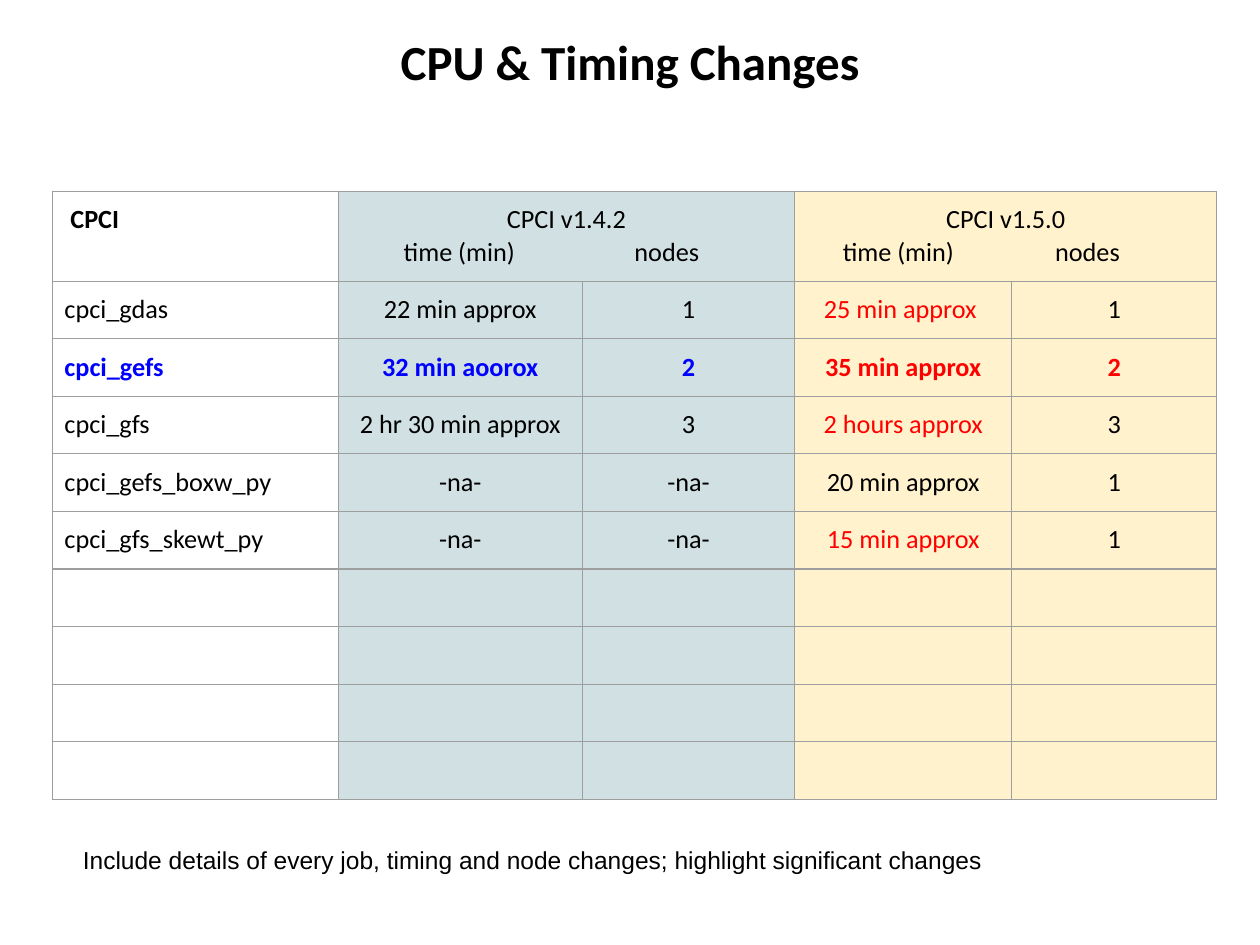
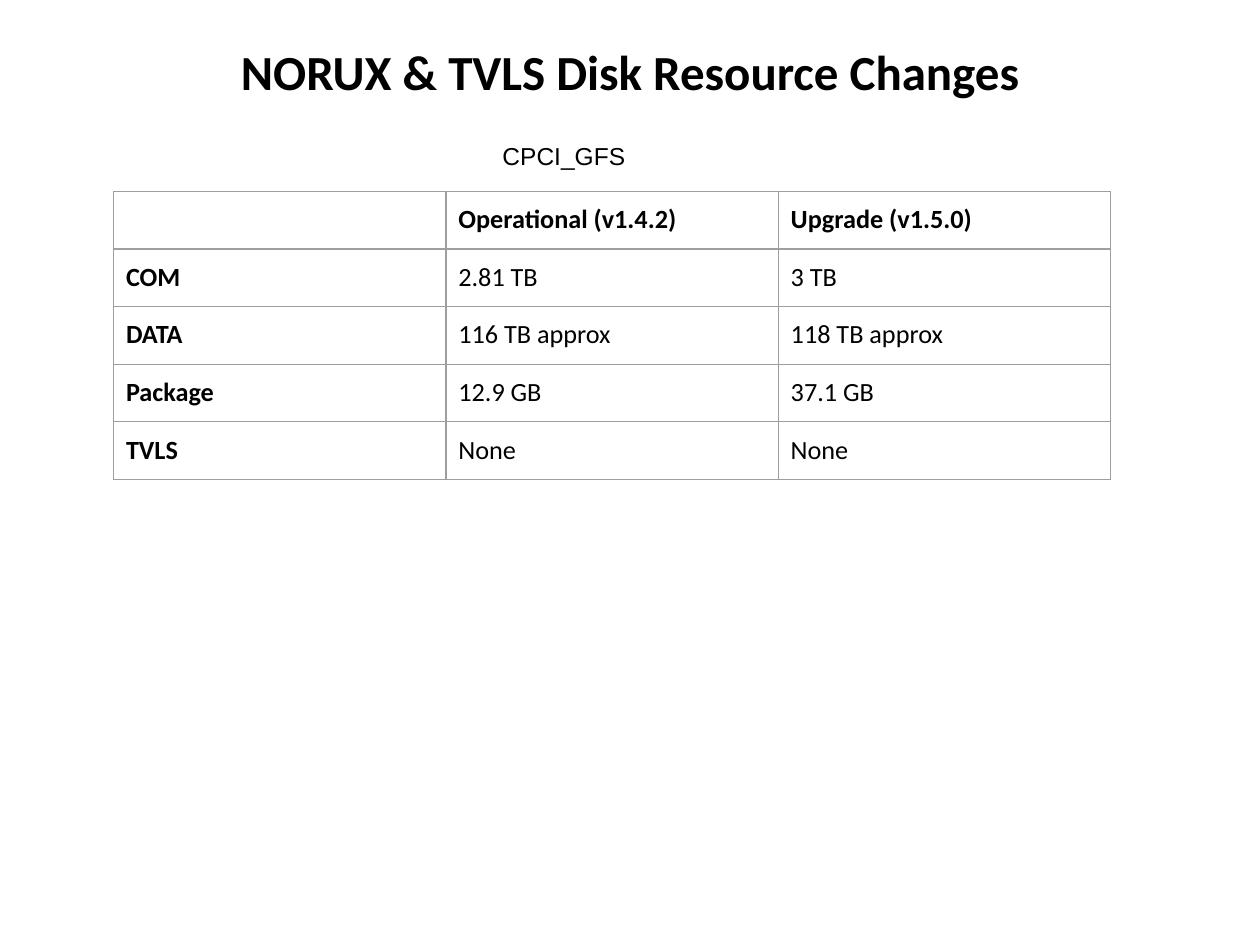
from lxml import etree
from pptx import Presentation
from pptx.dml.color import RGBColor
from pptx.enum import text as tx
from pptx.oxml import ns
from pptx.util import Cm, Pt

BLACK = RGBColor(0, 0, 0)
BLUE = RGBColor(0, 0, 255)
RED = RGBColor(255, 0, 0)
TEAL = RGBColor(0xD0, 0xE0, 0xE3)
CREAM = RGBColor(0xFF, 0xF2, 0xCC)
RULE = RGBColor(0x9E, 0x9E, 0x9E)

HEAD = "Calibri"
BODY = "Arial"
SIZE = 15
INSET = 0.25
TOP = 3.86
ROW = 1.16
LEFT, MID = tx.PP_ALIGN.LEFT, tx.PP_ALIGN.CENTER

# Each job: texts, then the ink of each column, then bold or not.
K, B, R = BLACK, BLUE, RED
JOBS = [
    (("cpci_gdas", "22 min approx", "1", "25 min approx ", "1"), (K, K, K, R, K), False),
    (("cpci_gefs", "32 min aoorox", "2", "35 min approx", "2"), (B, B, B, R, R), True),
    (("cpci_gfs", "2 hr 30 min approx", "3", "2 hours approx", "3"), (K, K, K, R, K), False),
    (("cpci_gefs_boxw_py", "-na-", "-na-", "20 min approx", "1"), (K,) * 5, False),
    (("cpci_gfs_skewt_py", "-na-", "-na-", "15 min approx", "1"), (K, K, K, R, K), False),
]
SPARE = 4
JOB_WIDTHS = (5.77, 4.92, 4.28, 4.38, 4.13)
JOB_FILLS = (None, TEAL, TEAL, CREAM, CREAM)
# First column, version, tab stops of the two sub-headings.
VERSIONS = [(1, "CPCI v1.4.2", (1.07, 5.72)), (3, "CPCI v1.5.0", (0.72, 5))]
SUBHEAD = "\ttime (min)\tnodes"
NOTE = "Include details of every job, timing and node changes; highlight significant changes"

CLUSTER, STORE = "NORUX", "TVLS"
DISKS = [
    ("", "Operational (v1.4.2)", "Upgrade (v1.5.0)"),
    ("COM", "2.81 TB", "3 TB"),
    ("DATA", "116 TB approx", "118 TB approx"),
    ("Package", "12.9 GB", "37.1 GB"),
    (STORE, "None", "None"),
]


def style(para, size, face, ink=BLACK, bold=False, align=LEFT):
    para.alignment = align
    for run in para.runs:
        font = run.font
        font.size, font.name, font.bold = Pt(size), face, bold
        font.color.rgb = ink
    if not para.runs:
        # keeps an empty row from growing to the default text size
        end = etree.SubElement(para._p, ns.qn("a:endParaRPr"))
        end.set("sz", str(size * 100))


def label(slide, words, x, y, w, h, size, face, pad=INSET, **look):
    frame = slide.shapes.add_textbox(Cm(x), Cm(y), Cm(w), Cm(h)).text_frame
    frame.word_wrap = True
    frame.margin_top = frame.margin_bottom = Cm(pad)
    frame.text = words
    style(frame.paragraphs[0], size, face, **look)


def title(slide, words, y):
    label(slide, words, 0.86, y, 23.68, 2.11, 28, HEAD, bold=True, align=MID)


def border(cell):
    props = cell._tc.get_or_add_tcPr()
    for side in ("lnL", "lnR", "lnT", "lnB"):
        line = etree.SubElement(props, ns.qn("a:" + side), w=str(Pt(0.75)))
        fill = etree.SubElement(line, ns.qn("a:solidFill"))
        etree.SubElement(fill, ns.qn("a:srgbClr"), val=str(RULE))


def grid(slide, x, widths, heights, fills):
    """Add a ruled table whose columns have the given fills."""
    table = slide.shapes.add_table(
        len(heights), len(widths), Cm(x), Cm(TOP),
        Cm(sum(widths)), Cm(sum(heights))).table
    table.first_row = table.horz_banding = False
    for col, w in zip(table.columns, widths):
        col.width = Cm(w)
    for row, h in zip(table.rows, heights):
        row.height = Cm(h)
        for cell, tint in zip(row.cells, fills):
            border(cell)
            if tint is None:
                cell.fill.background()
            else:
                cell.fill.solid()
                cell.fill.fore_color.rgb = tint
            cell.margin_left = cell.margin_right = Cm(INSET)
            cell.margin_top = cell.margin_bottom = Cm(INSET)
    return table


def write(cell, words, **look):
    cell.text_frame.text = words
    for para in cell.text_frame.paragraphs:
        style(para, SIZE, HEAD, **look)


def stops(para, places):
    tabs = etree.SubElement(para._p.get_or_add_pPr(), ns.qn("a:tabLst"))
    for place in places:
        etree.SubElement(tabs, ns.qn("a:tab"), pos=str(Cm(place)), algn="l")


def timing(slide):
    title(slide, "CPU & Timing Changes", 0.38)
    blank = (("",) * 5, (K,) * 5, False)
    rows = JOBS + [blank] * SPARE
    table = grid(slide, 1.05, JOB_WIDTHS, [1.81] + [ROW] * len(rows), JOB_FILLS)
    write(table.cell(0, 0), " CPCI", bold=True)
    for col, name, places in VERSIONS:
        cell = table.cell(0, col)
        cell.merge(table.cell(0, col + 1))
        write(cell, name + "\n" + SUBHEAD, align=MID)
        sub = cell.text_frame.paragraphs[1]
        sub.alignment = LEFT
        stops(sub, places)
    for r, (words, inks, bold) in enumerate(rows, 1):
        for c, (word, ink) in enumerate(zip(words, inks)):
            write(table.cell(r, c), word, ink=ink, bold=bold,
                  align=MID if c else LEFT)
    label(slide, NOTE, 1.42, 16.79, 21.34, 1.12, 14, BODY)


def disk(slide):
    title(slide, f"{CLUSTER} & {STORE} Disk Resource Changes", 0.58)
    table = grid(slide, 2.29, [6.7] * 3, [ROW] * len(DISKS), [None] * 3)
    for r, words in enumerate(DISKS):
        for c, word in enumerate(words):
            write(table.cell(r, c), word, bold=r == 0 or c == 0)
    label(slide, "CPCI_GFS", 9.88, 2.72, 3.73, 0.86, 14, BODY, pad=0.13)


def main():
    deck = Presentation()
    deck.slide_width, deck.slide_height = Cm(25.4), Cm(19.05)
    for build in (timing, disk):
        build(deck.slides.add_slide(deck.slide_layouts[6]))
    deck.save("out.pptx")


if __name__ == "__main__":
    main()
